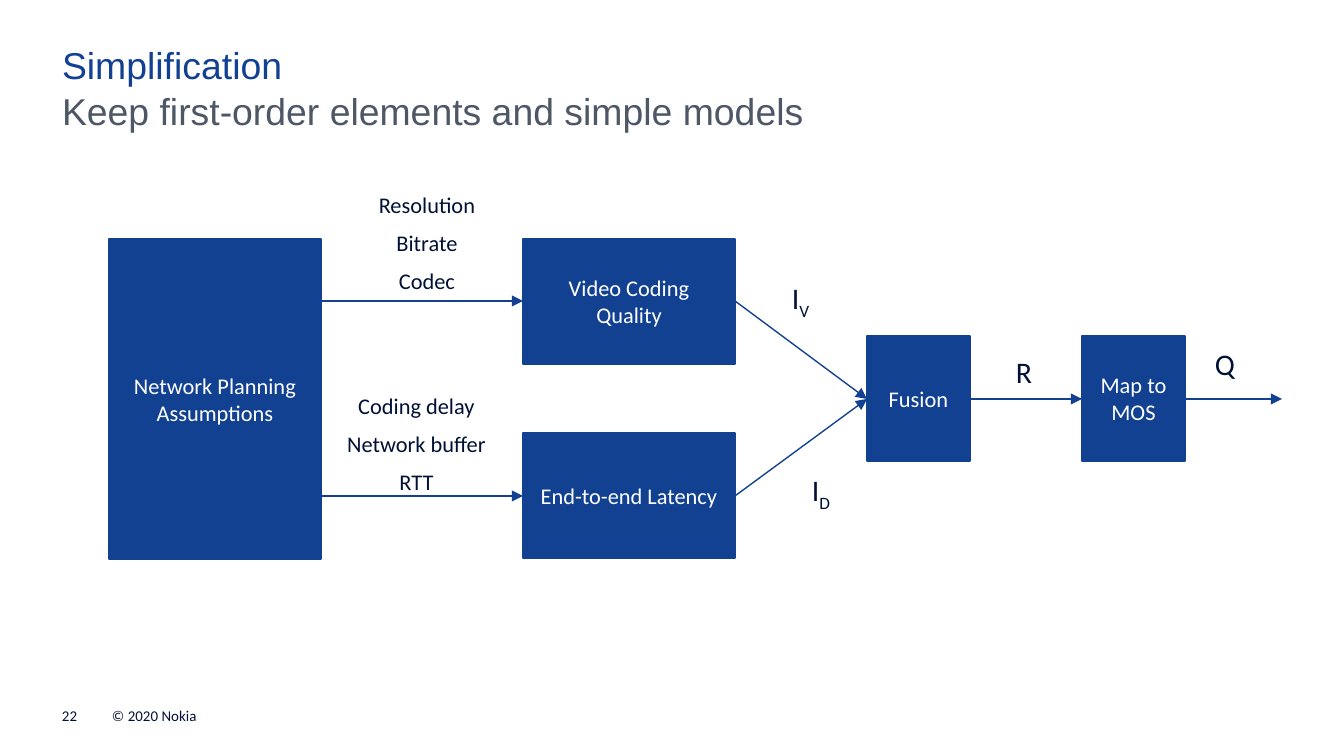
from lxml import etree
from pptx import Presentation, util as u
from pptx.dml.color import RGBColor
from pptx.enum import shapes, text
from pptx.oxml import ns

PX = 914400 / 134.4  # EMU per px
BLUE, NAVY, GREY, WHITE = "124191", "001135", "4D5766", "FFFFFF"
INSET = 11


def px(*lengths):
    return [u.Emu(round(length * PX)) for length in lengths]


def write(shape, lines, size, color, align, font="Calibri", inset=0, after=0,
          anchor=text.MSO_ANCHOR.TOP):
    """Fill a shape with lines; an underscore starts a subscript."""
    frame = shape.text_frame
    frame.word_wrap = True
    frame.auto_size = text.MSO_AUTO_SIZE.NONE
    frame.vertical_anchor = anchor
    (frame.margin_left, frame.margin_top,
     frame.margin_right, frame.margin_bottom) = px(*[inset] * 4)
    for i, line in enumerate(lines):
        paragraph = frame.add_paragraph() if i else frame.paragraphs[0]
        base, _, subscript = line.partition("_")
        paragraph.add_run().text = base
        if subscript:
            run = paragraph.add_run()
            run.text = subscript
            run.font._element.set("baseline", "-25000")
        paragraph.alignment = align
        paragraph.space_before = u.Pt(0)
        paragraph.space_after = u.Pt(after)
        paragraph.font.name = font
        paragraph.font.size = u.Pt(size)
        paragraph.font.color.rgb = RGBColor.from_string(color)


LEFT, CENTER = text.PP_ALIGN.LEFT, text.PP_ALIGN.CENTER
prs = Presentation()
prs.slide_width, prs.slide_height = px(1344, 756)
slide = prs.slides.add_slide(prs.slide_layouts[1])

# Title and subtitle
title, subtitle = slide.shapes.title, slide.placeholders[1]
bullet_off = subtitle.text_frame.paragraphs[0]._p.get_or_add_pPr()
bullet_off.set("marL", "0")
bullet_off.set("indent", "0")
etree.SubElement(bullet_off, ns.qn("a:buNone"))
for heading, top, words, color in (
        (title, 42, "Simplification", BLUE),
        (subtitle, 88, "Keep first-order elements and simple models", GREY)):
    heading.left, heading.top, heading.width, heading.height = px(62, top, 1222, 46)
    write(heading, [words], 20, color, LEFT, font="Arial")

# Footer
for left, width, words in ((62, 38, "22"), (112, 265, "© 2020 Nokia")):
    footer = slide.shapes.add_textbox(*px(left, 708, width, 17))
    write(footer, [words], 8, NAVY, LEFT, anchor=text.MSO_ANCHOR.BOTTOM)

# Processing blocks
for left, top, width, height, words in (
        (109, 239, 212, 320, "Network Planning Assumptions"),
        (523, 239, 212, 125, "Video Coding Quality"),
        (523, 433, 212, 125, "End-to-end Latency"),
        (867, 336, 103, 125, "Fusion"),
        (1082, 336, 103, 125, "Map to MOS")):
    block = slide.shapes.add_shape(shapes.MSO_SHAPE.RECTANGLE,
                                   *px(left, top, width, height))
    block.shadow.inherit = False
    block.fill.solid()
    block.fill.fore_color.rgb = RGBColor.from_string(BLUE)
    block.line.color.rgb = RGBColor.from_string(BLUE)
    block.line.width = u.Pt(0.75)
    write(block, [words], 12, WHITE, CENTER, inset=INSET, after=6,
          anchor=text.MSO_ANCHOR.MIDDLE)

# Signal arrows
VIDEO_Y, LATENCY_Y, FUSION_Y = 301, 496, 399
for x1, y1, x2, y2 in (
        (321, VIDEO_Y, 523, VIDEO_Y),
        (321, LATENCY_Y, 523, LATENCY_Y),
        (735, VIDEO_Y, 867, FUSION_Y),
        (735, LATENCY_Y, 867, FUSION_Y),
        (970, FUSION_Y, 1082, FUSION_Y),
        (1185, FUSION_Y, 1282, FUSION_Y)):
    arrow = slide.shapes.add_connector(shapes.MSO_CONNECTOR.STRAIGHT,
                                       *px(x1, y1, x2, y2))
    arrow.line.color.rgb = RGBColor.from_string(BLUE)
    arrow.line.width = u.Pt(0.75)
    etree.SubElement(arrow.line._get_or_add_ln(), ns.qn("a:tailEnd"), type="triangle")
    etree.SubElement(arrow._element.spPr, ns.qn("a:effectLst"))

# Input parameters above the arrows
for left, top, width, parameters in (
        (352, 180, 150, ("Resolution", "Bitrate", "Codec")),
        (329, 381, 175, ("Coding delay", "Network buffer", "RTT"))):
    inputs = slide.shapes.add_textbox(*px(left, top, width, 125))
    write(inputs, parameters, 12, NAVY, CENTER, inset=INSET, after=6)

# Signal names
for left, top, signal in ((781, 269, "I_V"), (801, 461, "I_D"),
                          (1005, 343, "R"), (1204, 335, "Q")):
    label = slide.shapes.add_textbox(*px(left, top, 62, 58))
    write(label, [signal], 16, NAVY, LEFT, inset=INSET, after=6)

prs.save("out.pptx")
